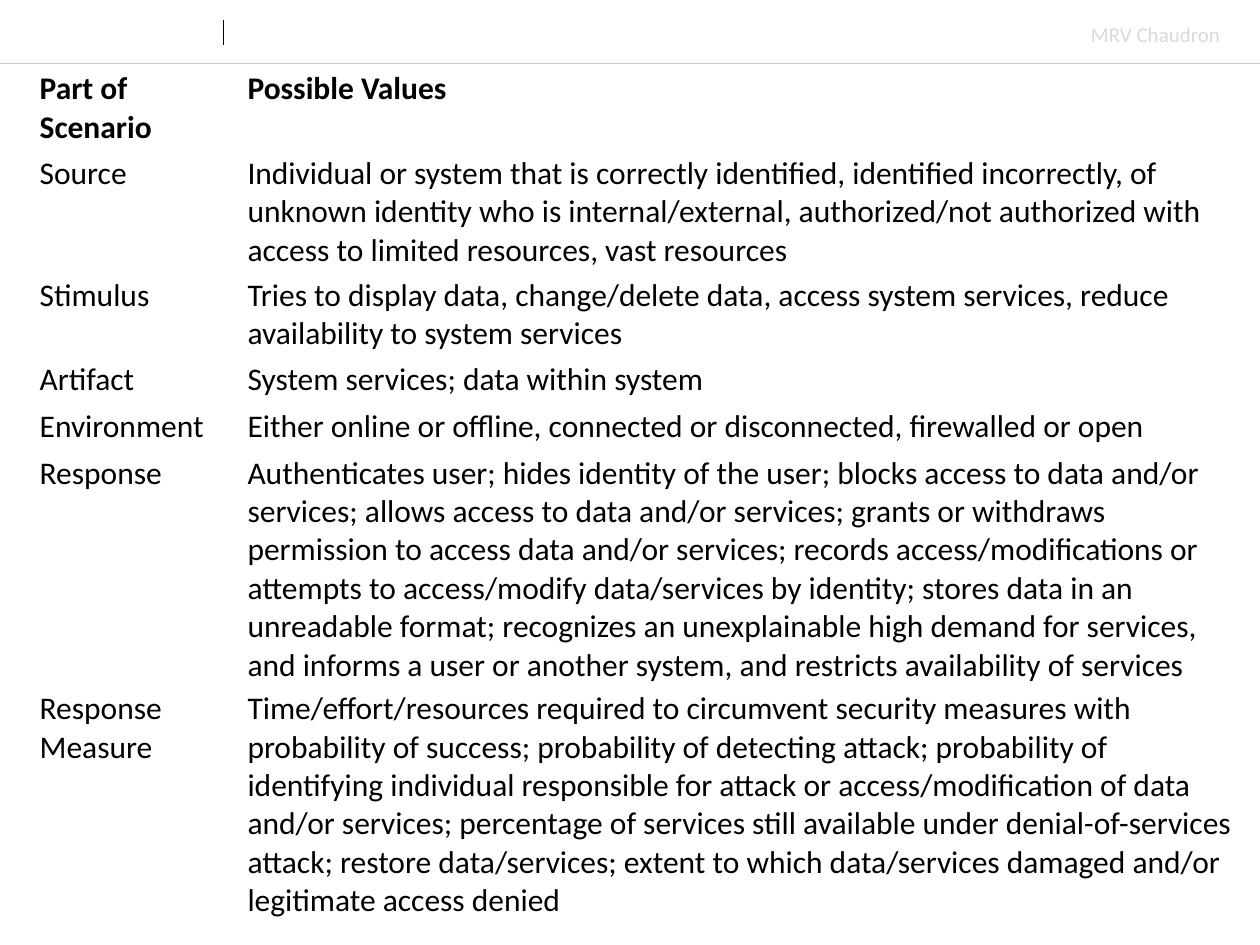
from lxml.etree import SubElement
from pptx import Presentation
from pptx.dml.color import RGBColor
from pptx.enum.shapes import MSO_CONNECTOR
from pptx.enum.text import MSO_AUTO_SIZE
from pptx.oxml.ns import qn
from pptx.util import Inches, Pt

COLORS = {"text": "000000", "author": "D9D9D9", "rule": "CCCCCC", "tick": "000000"}
FONT = "Calibri"
AUTHOR = "MRV Chaudron"
ROWS = [
    ("Part of Scenario", "Possible Values"),
    ("Source",
     "Individual or system that is correctly identified, identified incorrectly, of "
     "unknown identity who is internal/external, authorized/not authorized with "
     "access to limited resources, vast resources"),
    ("Stimulus",
     "Tries to display data, change/delete data, access system services, reduce "
     "availability to system services"),
    ("Artifact", "System services; data within system"),
    ("Environment",
     "Either online or offline, connected or disconnected, firewalled or open"),
    ("Response",
     "Authenticates user; hides identity of the user; blocks access to data and/or "
     "services; allows access to data and/or services; grants or withdraws "
     "permission to access data and/or services; records access/modifications or "
     "attempts to access/modify data/services by identity; stores data in an "
     "unreadable format; recognizes an unexplainable high demand for services, "
     "and informs a user or another system, and restricts availability of services"),
    ("Response Measure",
     "Time/effort/resources required to circumvent security measures with "
     "probability of success; probability of detecting attack; probability of "
     "identifying individual responsible for attack or access/modification of data "
     "and/or services; percentage of services still available under "
     "denial-of-services attack; restore data/services; extent to which "
     "data/services damaged and/or legitimate access denied"),
]
COL_WIDTHS = (1.65, 7.95)
ROW_HEIGHTS = (0.25, 0.61, 0.43, 0.25, 0.25, 1.15, 1.15)
TABLE_LEFT, TABLE_TOP, TABLE_HEIGHT = 0.28, 0.52, 6.82
# name of colour, width in points, start, end
HEADER_LINES = [
    ("rule", 0.25, (0, 0.5), (10, 0.5)),
    ("tick", 0.5, (1.77, 0.16), (1.77, 0.36)),
]


def set_all(obj, values):
    for name, value in values.items():
        setattr(obj, name, value)


def write(p, text, size, color, bold=False):
    r = p.add_run()
    r.text = text
    set_all(r.font, {"name": FONT, "size": Pt(size), "bold": bold})
    r.font.color.rgb = RGBColor.from_string(COLORS[color])


def add_header(slide):
    for color, width, start, end in HEADER_LINES:
        line = slide.shapes.add_connector(
            MSO_CONNECTOR.STRAIGHT, *(Inches(v) for v in start + end))
        line.line.color.rgb = RGBColor.from_string(COLORS[color])
        line.line.width = Pt(width)
        SubElement(line._element.spPr, qn("a:effectLst"))
    box = slide.shapes.add_textbox(*(Inches(v) for v in (8.56, 0.12, 1.23, 0.3)))
    tf = box.text_frame
    set_all(tf, {"word_wrap": False, "auto_size": MSO_AUTO_SIZE.SHAPE_TO_FIT_TEXT})
    write(tf.paragraphs[0], AUTHOR, 12, "author")


def add_scenario_table(slide):
    frame = slide.shapes.add_table(
        len(ROWS), len(COL_WIDTHS), Inches(TABLE_LEFT), Inches(TABLE_TOP),
        Inches(sum(COL_WIDTHS)), Inches(TABLE_HEIGHT))
    table = frame.table
    set_all(table, {"first_row": False, "horz_banding": False})
    for col, width in zip(table.columns, COL_WIDTHS):
        col.width = Inches(width)
    for row, height in zip(table.rows, ROW_HEIGHTS):
        row.height = Inches(height)
    sides = ("margin_left", "margin_right", "margin_top", "margin_bottom")
    for i, texts in enumerate(ROWS):
        for cell, text in zip(table.rows[i].cells, texts):
            cell.fill.background()
            set_all(cell, dict.fromkeys(sides, Pt(2.5)))
            write(cell.text_frame.paragraphs[0], text, 18, "text", bold=i == 0)
    frame.height = Inches(TABLE_HEIGHT)


def main():
    prs = Presentation()
    set_all(prs, {"slide_width": Inches(10), "slide_height": Inches(7.5)})
    slide = prs.slides.add_slide(prs.slide_layouts[6])
    add_header(slide)
    add_scenario_table(slide)
    prs.save("out.pptx")


if __name__ == "__main__":
    main()
